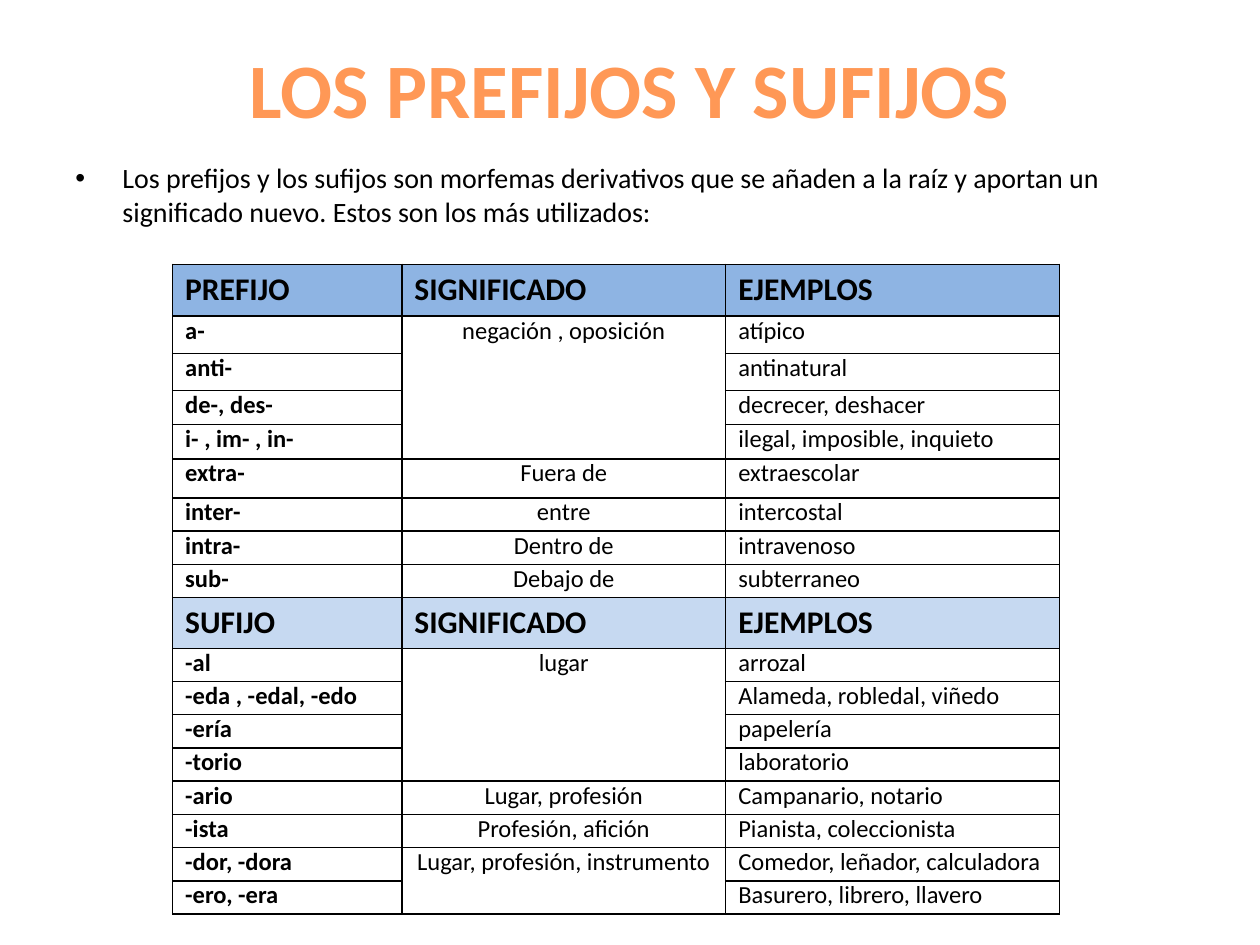
from lxml import etree
from pptx import Presentation
from pptx.dml.color import RGBColor
from pptx.enum.text import MSO_ANCHOR, PP_ALIGN
from pptx.oxml.ns import qn
from pptx.util import Cm, Pt

CENTER, LEFT = PP_ALIGN.CENTER, PP_ALIGN.LEFT
MIDDLE = MSO_ANCHOR.MIDDLE
ORANGE = RGBColor(0xFF, 0x98, 0x56)
BLACK = RGBColor(0, 0, 0)
BLUE = RGBColor(0x8E, 0xB4, 0xE3)
PALE_BLUE = RGBColor(0xC6, 0xD9, 0xF1)
FONT = "Calibri"

ROWS = [
    ("PREFIJO", "SIGNIFICADO", "EJEMPLOS"),
    ("a-", "negación , oposición", "atípico"),
    ("anti-", "", "antinatural"),
    ("de-, des-", "", "decrecer, deshacer"),
    ("i- , im- , in-", "", "ilegal, imposible, inquieto"),
    ("extra-", "Fuera de", "extraescolar"),
    ("inter-", "entre", "intercostal"),
    ("intra-", "Dentro de", "intravenoso"),
    ("sub-", "Debajo de", "subterraneo"),
    ("SUFIJO", "SIGNIFICADO", "EJEMPLOS"),
    ("-al", "lugar", "arrozal"),
    ("-eda , -edal, -edo", "", "Alameda, robledal, viñedo"),
    ("-ería", "", "papelería"),
    ("-torio", "", "laboratorio"),
    ("-ario", "Lugar, profesión", "Campanario, notario"),
    ("-ista", "Profesión, afición", "Pianista, coleccionista"),
    ("-dor, -dora", "Lugar, profesión, instrumento", "Comedor, leñador, calculadora"),
    ("-ero, -era", "", "Basurero, librero, llavero"),
]
COL_WIDTHS = [4.62, 6.53, 6.73]
ROW_HEIGHTS = [1.04, 0.76, 0.74, 0.69, 0.69, 0.79] + [0.67] * 3 + [1.02] + [0.67] * 8
HEADER_FILLS = {0: BLUE, 9: PALE_BLUE}
MERGES = [(1, 4), (10, 13), (16, 17)]


def write(p, text, size, color, bold=False):
    p.text = text
    for r in p.runs:
        r.font.name = FONT
        r.font.size = Pt(size)
        r.font.bold = bold
        r.font.color.rgb = color


def add_borders(cell):
    tc_pr = cell._tc.get_or_add_tcPr()
    for i, side in enumerate(("a:lnL", "a:lnR", "a:lnT", "a:lnB")):
        ln = etree.Element(qn(side), w=str(Pt(1)))
        fill = etree.SubElement(ln, qn("a:solidFill"))
        etree.SubElement(fill, qn("a:srgbClr"), val=str(BLACK))
        tc_pr.insert(i, ln)


prs = Presentation()
prs.slide_width, prs.slide_height = Cm(25.4), Cm(19.05)
s = prs.slides.add_slide(prs.slide_layouts[6])

tf = s.shapes.add_textbox(Cm(1.27), Cm(0.43), Cm(22.86), Cm(2.69)).text_frame
tf.word_wrap = True
tf.vertical_anchor = MIDDLE
p = tf.paragraphs[0]
p.alignment = CENTER
write(p, "LOS PREFIJOS Y SUFIJOS", 44, ORANGE, True)

tf = s.shapes.add_textbox(Cm(1.27), Cm(3.12), Cm(22.86), Cm(1.96)).text_frame
tf.word_wrap = True
p = tf.paragraphs[0]
write(p, "Los prefijos y los sufijos son morfemas derivativos que se añaden a la raíz "
         "y aportan un significado nuevo. Estos son los más utilizados:", 16, BLACK)
p.space_before = Pt(3.2)
p_pr = p._p.get_or_add_pPr()
p_pr.set("marL", str(Cm(0.95)))
p_pr.set("indent", str(-Cm(0.95)))
etree.SubElement(p_pr, qn("a:buFont"), typeface="Arial")
etree.SubElement(p_pr, qn("a:buChar"), char="•")

table = s.shapes.add_table(len(ROWS), 3, Cm(3.48), Cm(5.33),
                           Cm(sum(COL_WIDTHS)), Cm(sum(ROW_HEIGHTS))).table
table.first_row = False
table.horz_banding = False
for col, width in zip(table.columns, COL_WIDTHS):
    col.width = Cm(width)
for row, height in zip(table.rows, ROW_HEIGHTS):
    row.height = Cm(height)

for i, texts in enumerate(ROWS):
    header = i in HEADER_FILLS
    for j, text in enumerate(texts):
        cell = table.cell(i, j)
        p = cell.text_frame.paragraphs[0]
        write(p, text, 18 if header else 14, BLACK, header or j == 0)
        if header:
            cell.fill.solid()
            cell.fill.fore_color.rgb = HEADER_FILLS[i]
        else:
            cell.fill.background()
            p.line_spacing = 0.7
            p.alignment = CENTER if j == 1 else LEFT
        add_borders(cell)

for first, last in MERGES:
    table.cell(first, 1).merge(table.cell(last, 1))

prs.save("out.pptx")
